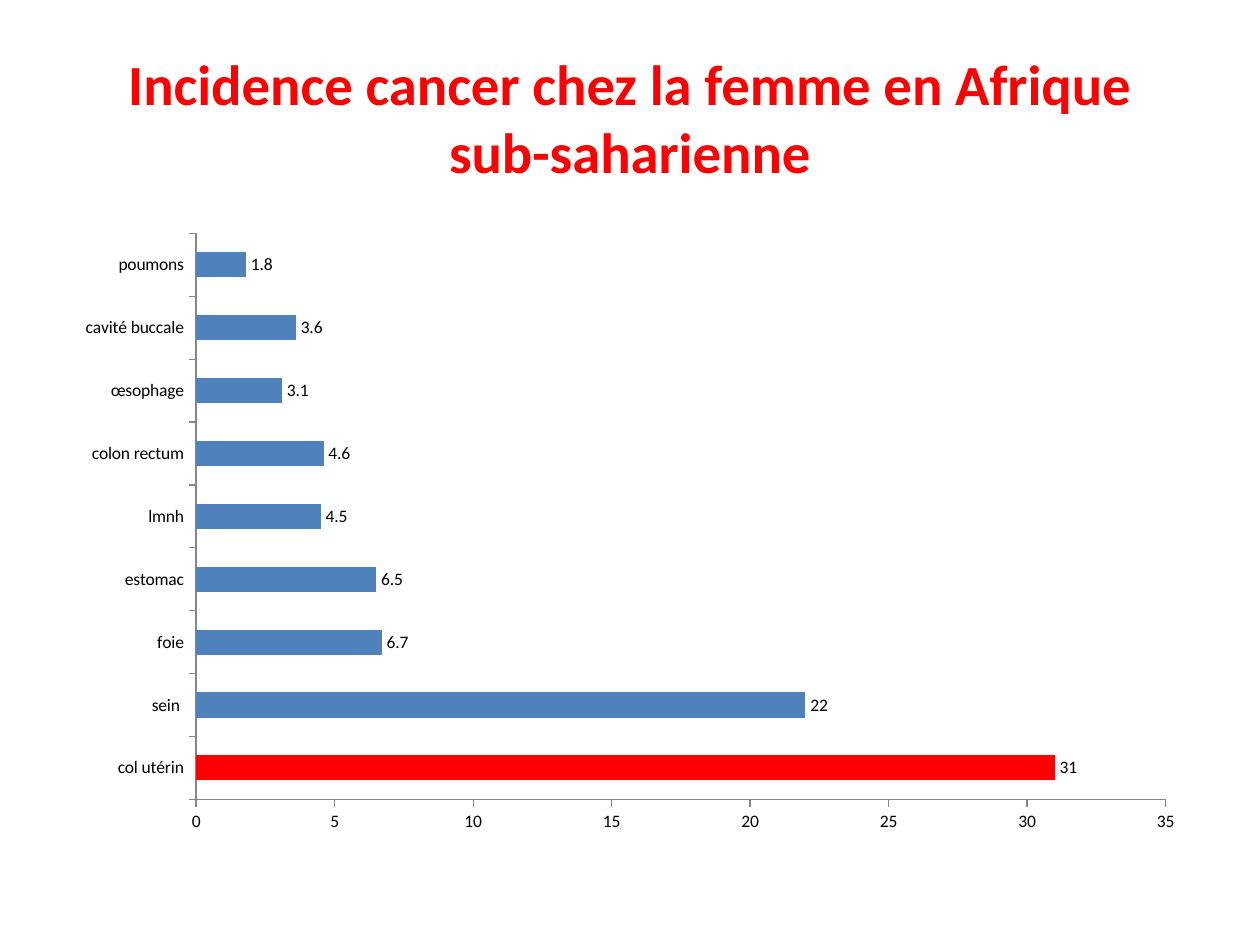
from pptx import Presentation
from pptx.chart.data import CategoryChartData
from pptx.dml.color import RGBColor
from pptx.enum.chart import XL_CHART_TYPE, XL_LABEL_POSITION, XL_TICK_MARK
from pptx.enum.text import MSO_ANCHOR, MSO_AUTO_SIZE, PP_ALIGN
from pptx.util import Emu, Pt

PX = 914400 // 126
FONT = "Calibri"
COLORS = {"red": "FF0000", "blue": "4F81BD", "black": "000000", "axis": "868686"}
INCIDENCE = {
    "col utérin": 31,
    "sein ": 22,
    "foie": 6.7,
    "estomac": 6.5,
    "lmnh": 4.5,
    "colon rectum": 4.6,
    "œsophage": 3.1,
    "cavité buccale": 3.6,
    "poumons": 1.8,
}


def px(n):
    return Emu(n * PX)


def rgb(name):
    return RGBColor.from_string(COLORS[name])


def set_font(font, size, color, bold=False):
    font.name = FONT
    font.size = Pt(size)
    font.bold = bold
    font.color.rgb = rgb(color)


def fill_solid(fmt, color):
    fmt.fill.solid()
    fmt.fill.fore_color.rgb = rgb(color)


def add_title(s, text, x, y, w, h):
    sp = s.shapes.title
    sp.left, sp.top, sp.width, sp.height = px(x), px(y), px(w), px(h)
    tf = sp.text_frame
    tf.word_wrap = True
    tf.auto_size = MSO_AUTO_SIZE.NONE
    tf.vertical_anchor = MSO_ANCHOR.MIDDLE
    p = tf.paragraphs[0]
    p.alignment = PP_ALIGN.CENTER
    r = p.add_run()
    r.text = text
    set_font(r.font, 32.4, "red", bold=True)


def format_axis(axis):
    axis.has_major_gridlines = False
    axis.major_tick_mark = XL_TICK_MARK.OUTSIDE
    axis.minor_tick_mark = XL_TICK_MARK.NONE
    axis.format.line.color.rgb = rgb("axis")
    axis.format.line.width = Pt(0.75)


def add_bar_chart(s, values, x, y, w, h):
    data = CategoryChartData(number_format="General")
    data.categories = list(values)
    data.add_series("Series 1", list(values.values()))
    frame = s.shapes.add_chart(
        XL_CHART_TYPE.BAR_CLUSTERED, px(x), px(y), px(w), px(h), data
    )
    chart = frame.chart
    chart.has_title = False
    chart.has_legend = False
    set_font(chart.font, 10, "black")
    for axis in (chart.category_axis, chart.value_axis):
        format_axis(axis)
    chart.value_axis.minimum_scale = 0
    chart.value_axis.maximum_scale = 35
    chart.value_axis.major_unit = 5

    plot = chart.plots[0]
    plot.gap_width = 150
    plot.vary_by_categories = False
    series = plot.series[0]
    series.invert_if_negative = False
    fill_solid(series.format, "blue")
    fill_solid(series.points[0].format, "red")
    labels = series.data_labels
    labels.show_value = True
    labels.position = XL_LABEL_POSITION.OUTSIDE_END
    set_font(labels.font, 10, "black")


def main():
    prs = Presentation()
    prs.slide_width, prs.slide_height = px(1260), px(945)
    s = prs.slides.add_slide(prs.slide_layouts[5])
    add_title(
        s, "Incidence cancer chez la femme en Afrique sub-saharienne", 63, 38, 1134, 157
    )
    add_bar_chart(s, INCIDENCE, 63, 221, 1134, 623)
    prs.save("out.pptx")


if __name__ == "__main__":
    main()
